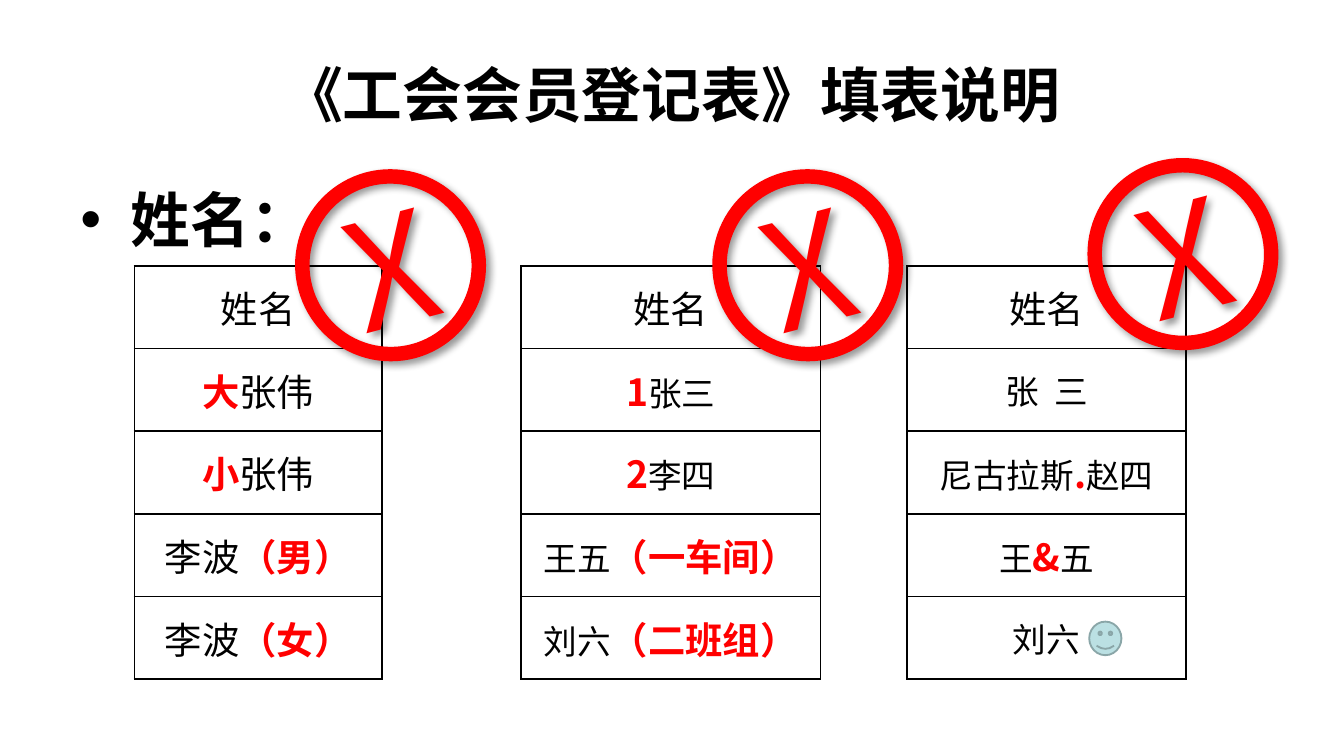
from lxml import etree
from pptx import Presentation
from pptx import util as u
from pptx.dml.color import RGBColor
from pptx.enum import shapes, text
from pptx.oxml import parse_xml
from pptx.oxml.ns import nsdecls, qn

PX = 9525  # EMU per px, 96 px to the inch
BLACK = RGBColor(0x00, 0x00, 0x00)
RED = RGBColor(0xFF, 0x00, 0x00)
FACE = RGBColor(0xBB, 0xE0, 0xE3)
FACE_LINE = RGBColor(0x8A, 0xA6, 0xA8)
SANS = "Noto Sans CJK SC"

HEADING = dict(name="Arial", size=u.Pt(32), bold=True, color=BLACK)
NORMAL = dict(name=SANS, size=u.Pt(20), bold=False, color=BLACK)
SMALL = dict(NORMAL, size=u.Pt(18))
WRONG = dict(NORMAL, bold=True, color=RED)
CROSS = dict(NORMAL, size=u.Pt(80), color=RED)

TABLE_TOP, ROW_HEIGHT = 190, 59
HEADER = [("姓名", NORMAL)]
TABLES = [
    (96, 177, [
        HEADER,
        [("大", WRONG), ("张伟", NORMAL)],
        [("小", WRONG), ("张伟", NORMAL)],
        [("李波", NORMAL), ("（男）", WRONG)],
        [("李波", NORMAL), ("（女）", WRONG)],
    ]),
    (372, 214, [
        HEADER,
        [("1", WRONG), ("张三", SMALL)],
        [("2", WRONG), ("李四", SMALL)],
        [("王五", SMALL), ("（一车间）", WRONG)],
        [("刘六", SMALL), ("（二班组）", WRONG)],
    ]),
    (648, 199, [
        HEADER,
        [("张  三", SMALL)],
        [("尼古拉斯", SMALL), (".", WRONG), ("赵四", SMALL)],
        [("王", SMALL), ("&", WRONG), ("五", SMALL)],
        [("刘六", SMALL)],
    ]),
]
STAMPS = [(216, 126), (514, 126), (782, 118)]


class Deck:
    def __init__(self, width, height):
        self.prs = Presentation()
        self.prs.slide_width, self.prs.slide_height = width * PX, height * PX
        self.s = self.prs.slides.add_slide(self.prs.slide_layouts[6])

    def add_runs(self, tf, runs, align):
        p = tf.paragraphs[0]
        p.alignment = align
        for words, style in runs:
            r = p.add_run()
            r.text = words
            for key, value in style.items():
                if key == "color":
                    r.font.color.rgb = value
                else:
                    setattr(r.font, key, value)
            ea = etree.SubElement(r._r.get_or_add_rPr(), qn("a:ea"))
            ea.set("typeface", SANS)
        return p

    def text_box(self, box, words, align, anchor, bullet_indent=0):
        tf = self.s.shapes.add_textbox(*(v * PX for v in box)).text_frame
        tf.word_wrap, tf.vertical_anchor = True, anchor
        p = self.add_runs(tf, [(words, HEADING)], align)
        if bullet_indent:
            pPr = p._p.get_or_add_pPr()
            pPr.set("marL", str(bullet_indent * PX))
            pPr.set("indent", str(-bullet_indent * PX))
            etree.SubElement(pPr, qn("a:buFont")).set("typeface", "Arial")
            etree.SubElement(pPr, qn("a:buChar")).set("char", "•")

    def table(self, x, width, rows):
        """Add a one-column table with a black grid."""
        box = (x, TABLE_TOP, width, ROW_HEIGHT * len(rows))
        table = self.s.shapes.add_table(len(rows), 1, *(v * PX for v in box)).table
        table.first_row = table.horz_banding = False
        for i, runs in enumerate(rows):
            cell = table.cell(i, 0)
            cell.vertical_anchor = text.MSO_ANCHOR.MIDDLE
            cell.fill.background()
            self.add_runs(cell.text_frame, runs, text.PP_ALIGN.CENTER)
            tcPr = cell._tc.get_or_add_tcPr()
            for n, side in enumerate("LRTB"):
                tcPr.insert(n, parse_xml(
                    f'<a:ln{side} {nsdecls("a")} w="{u.Pt(1)}"><a:solidFill>'
                    f'<a:srgbClr val="{BLACK}"/></a:solidFill></a:ln{side}>'))

    def shape(self, kind, box, line, weight, fill=None):
        sp = self.s.shapes.add_shape(kind, *(v * PX for v in box))
        sp.shadow.inherit = False
        sp.line.color.rgb, sp.line.width = line, u.Pt(weight)
        if fill is None:
            sp.fill.background()
        else:
            sp.fill.solid()
            sp.fill.fore_color.rgb = fill
        return sp

    def stamp(self, x, y):
        """Add a tilted red ring with a cross in it."""
        sp = self.shape(shapes.MSO_SHAPE.OVAL, (x, y, 126, 127), RED, 7.75)
        sp.rotation = 345
        effects = sp._element.spPr.find(qn("a:effectLst"))
        effects.append(parse_xml(
            f'<a:outerShdw {nsdecls("a")} blurRad="{u.Pt(4)}" dist="{u.Pt(3)}" '
            f'dir="{45 * 60000}" algn="tl" rotWithShape="0"><a:srgbClr val="{BLACK}">'
            '<a:alpha val="40000"/></a:srgbClr></a:outerShdw>'))
        tf = sp.text_frame
        tf.word_wrap, tf.vertical_anchor = True, text.MSO_ANCHOR.MIDDLE
        self.add_runs(tf, [("X", CROSS)], text.PP_ALIGN.CENTER)


def main():
    deck = Deck(960, 540)
    deck.text_box((48, 22, 864, 90), "《工会会员登记表》填表说明",
                  text.PP_ALIGN.CENTER, text.MSO_ANCHOR.MIDDLE)
    deck.text_box((48, 126, 168, 56), "姓名：",
                  text.PP_ALIGN.LEFT, text.MSO_ANCHOR.TOP, bullet_indent=36)
    for x, width, rows in TABLES:
        deck.table(x, width, rows)
    deck.shape(shapes.MSO_SHAPE.SMILEY_FACE, (778, 444, 23, 24), FACE_LINE, 1, FACE)
    for x, y in STAMPS:
        deck.stamp(x, y)
    deck.prs.save("out.pptx")


if __name__ == "__main__":
    main()
